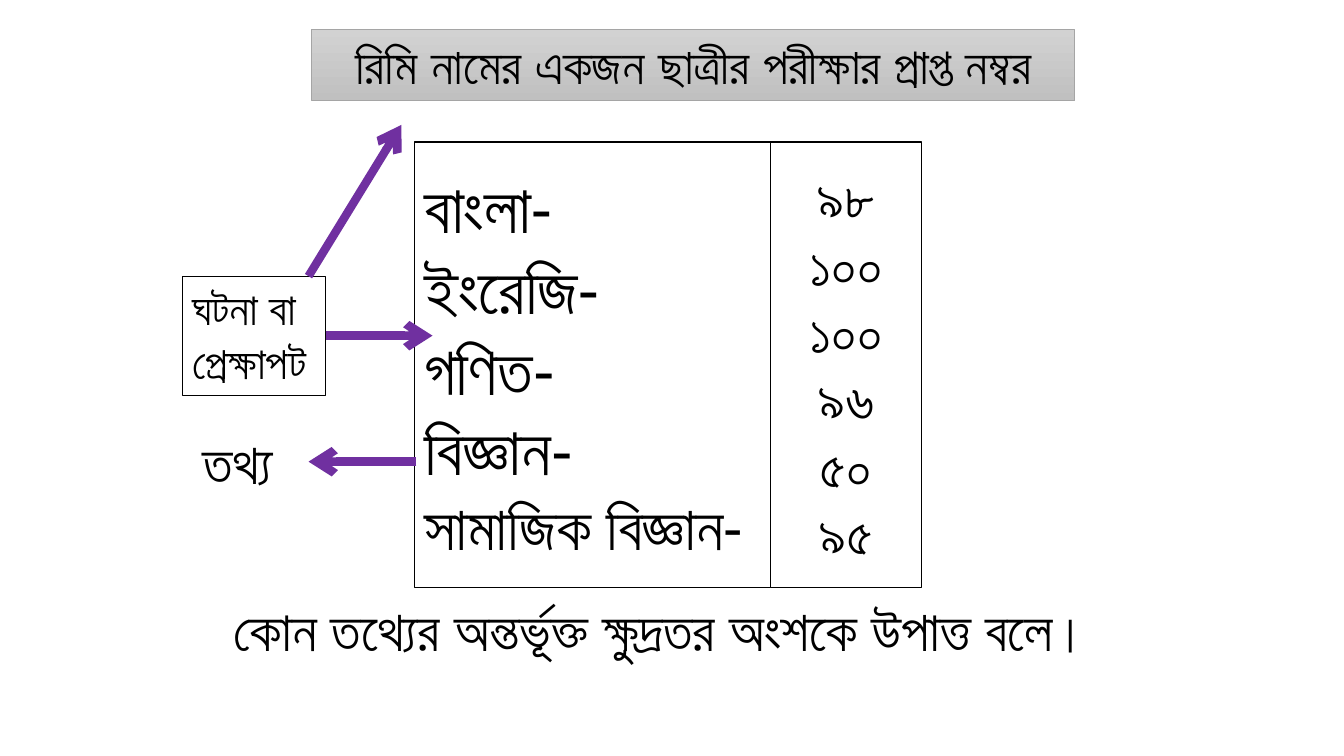
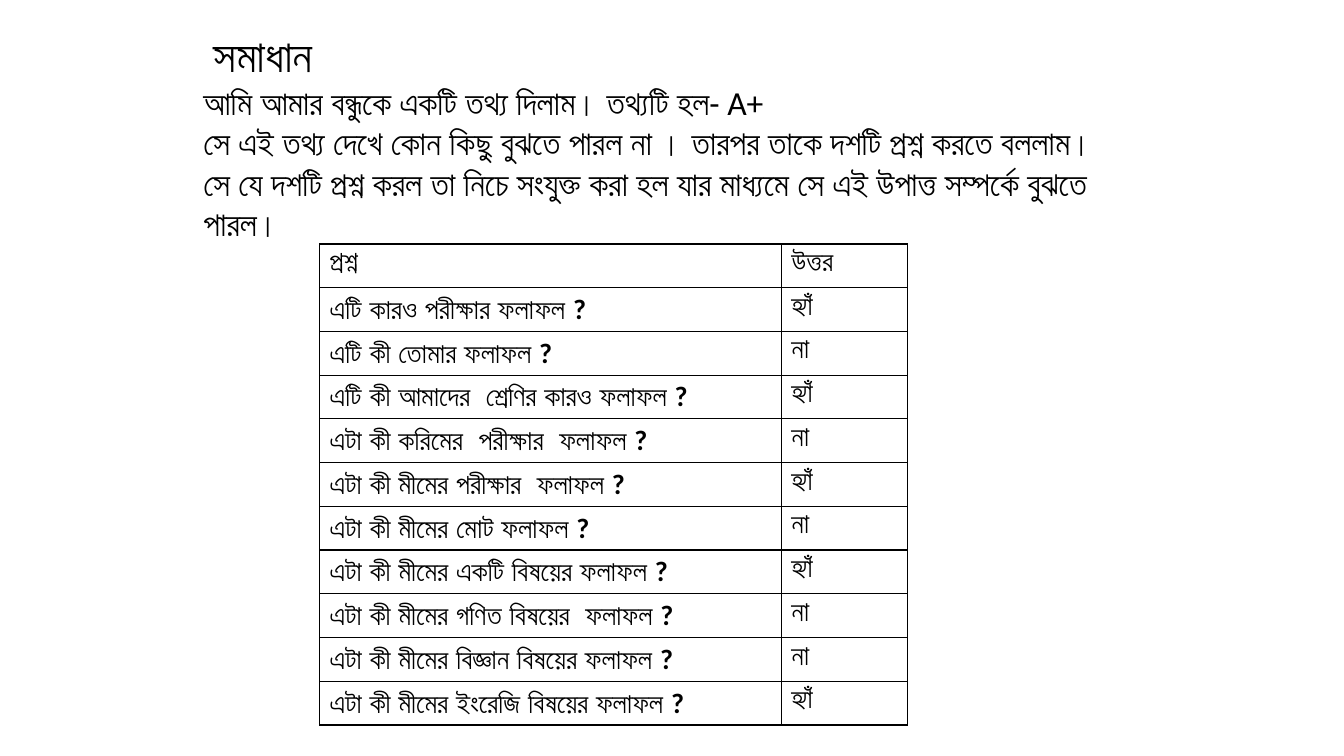
from lxml.etree import SubElement
from pptx import Presentation
from pptx.dml.color import RGBColor
from pptx.enum.shapes import MSO_CONNECTOR, MSO_SHAPE
from pptx.enum.text import MSO_ANCHOR, PP_ALIGN
from pptx.oxml.ns import qn
from pptx.util import Inches, Pt

FONT = "Calibri"
BLACK, WHITE, PURPLE = "000000", "FFFFFF", "7030A0"
GREY = ("D2D2D2", "C0C0C0")
EDGE = "A5A5A5"
LEFT, MID = PP_ALIGN.LEFT, PP_ALIGN.CENTER

# Slide 1 content
TITLE = "রিমি নামের একজন ছাত্রীর পরীক্ষার প্রাপ্ত নম্বর"
MARKS = [
    ("বাংলা-", 48),
    ("ইংরেজি-", 48),
    ("গণিত-", 48),
    ("বিজ্ঞান-", 48),
    ("সামাজিক বিজ্ঞান-", 44),
]
SCORES = ["৯৮", "১০০", "১০০", "৯৬", "৫০", "৯৫"]
CLOSING = "কোন তথ্যের অন্তর্ভূক্ত ক্ষুদ্রতর অংশকে উপাত্ত বলে।"
EVENT = "ঘটনা বা প্রেক্ষাপট"
FACT = "তথ্য"
ARROWS = [  # from x, y, to x, y
    (3.06, 2.74, 3.98, 1.24),
    (3.23, 3.33, 4.29, 3.33),
    (4.13, 4.58, 3.06, 4.58),
]

# Slide 2 content
INTRO = [
    ("সমাধান", 32),
    ("আমি আমার বন্ধুকে একটি তথ্য দিলাম। তথ্যটি হল- A+", 24),
    ("সে এই তথ্য দেখে কোন কিছু বুঝতে পারল না । তারপর তাকে দশটি প্রশ্ন করতে বললাম।", 24),
    ("সে যে দশটি প্রশ্ন করল তা নিচে সংযুক্ত করা হল যার মাধ্যমে সে এই উপাত্ত সম্পর্কে বুঝতে পারল।", 24),
]
YES, NO = "হ্যাঁ", "না"
ROWS = [
    ("প্রশ্ন", "উত্তর"),
    ("এটি কারও পরীক্ষার ফলাফল ?", YES),
    ("এটি কী তোমার ফলাফল ?", NO),
    ("এটি কী আমাদের  শ্রেণির কারও ফলাফল ?", YES),
    ("এটা কী করিমের  পরীক্ষার  ফলাফল ?", NO),
    ("এটা কী মীমের পরীক্ষার  ফলাফল ?", YES),
    ("এটা কী মীমের মোট ফলাফল ?", NO),
    ("এটা কী মীমের একটি বিষয়ের ফলাফল ?", YES),
    ("এটা কী মীমের গণিত বিষয়ের  ফলাফল ?", NO),
    ("এটা কী মীমের বিজ্ঞান বিষয়ের ফলাফল ?", NO),
    ("এটা কী মীমের ইংরেজি বিষয়ের ফলাফল ?", YES),
]
COLS = (4.58, 1.25)
ROW_H = 0.43


def color(text):
    return RGBColor.from_string(text)


def write(frame, lines, align=LEFT, bold=False):
    """Fill a text frame with (text, size) lines."""
    frame.word_wrap = True
    for i, (text, size) in enumerate(lines):
        para = frame.add_paragraph() if i else frame.paragraphs[0]
        para.text, para.alignment = text, align
        font = para.font
        font.name, font.size, font.bold = FONT, Pt(size), bold
        font.color.rgb = color(BLACK)


def label(slide, spot, lines, align=LEFT, bold=False):
    box = slide.shapes.add_textbox(*map(Inches, spot))
    write(box.text_frame, lines, align, bold)
    return box


def panel(slide, spot, lines, align=LEFT, bold=False, fill=None,
          edge=BLACK, width=1, anchor=MSO_ANCHOR.MIDDLE):
    box = slide.shapes.add_shape(MSO_SHAPE.RECTANGLE, *map(Inches, spot))
    box.shadow.inherit = False
    if isinstance(fill, tuple):
        box.fill.gradient()
        box.fill.gradient_angle = 270
        for stop, shade in zip(box.fill.gradient_stops, fill):
            stop.color.rgb = color(shade)
    elif fill:
        box.fill.solid()
        box.fill.fore_color.rgb = color(fill)
    else:
        box.fill.background()
    box.line.color.rgb = color(edge)
    box.line.width = Pt(width)
    box.text_frame.vertical_anchor = anchor
    write(box.text_frame, lines, align, bold)
    return box


def arrow(slide, ends):
    link = slide.shapes.add_connector(MSO_CONNECTOR.STRAIGHT, *map(Inches, ends))
    link.line.color.rgb = color(PURPLE)
    link.line.width = Pt(6)
    SubElement(link.line._get_or_add_ln(), qn("a:tailEnd"), type="arrow")
    SubElement(link._element.spPr, qn("a:effectLst"))
    return link


def border(cell):
    """Draw thin black lines on all four sides of a cell."""
    props = cell._tc.get_or_add_tcPr()
    for i, side in enumerate(("lnL", "lnR", "lnT", "lnB")):
        line = props.makeelement(qn("a:" + side), {"w": str(Pt(1))})
        fill = SubElement(line, qn("a:solidFill"))
        SubElement(fill, qn("a:srgbClr"), val=BLACK)
        props.insert(i, line)


def marks(slide):
    top = MSO_ANCHOR.TOP
    panel(slide, (3.09, 0.29, 7.57, 0.71), [(TITLE, 36)], MID, True,
          GREY, EDGE, 0.5, top)
    # Subjects and scores
    panel(slide, (4.11, 1.41, 3.54, 4.42), MARKS, fill=WHITE)
    panel(slide, (7.64, 1.41, 1.5, 4.42), [(s, 40) for s in SCORES], MID, fill=WHITE)
    label(slide, (1.65, 5.86, 9.83, 0.77), [(CLOSING, 40)], MID)
    # Side labels and arrows
    event = panel(slide, (1.81, 2.74, 1.42, 1.18), [(EVENT, 32)],
                  width=0.75, anchor=top)
    links = [arrow(slide, ends) for ends in ARROWS]
    links[1].begin_connect(event, 3)
    label(slide, (1.91, 4.2, 1.06, 0.77), [(FACT, 40)], bold=True)


def answers(slide):
    intro = label(slide, (1.92, 0.23, 9.33, 2.26), INTRO)
    first = intro.text_frame.paragraphs[0]
    first._p.get_or_add_pPr().set("indent", str(Inches(0.1)))
    # Questions and answers
    size = (sum(COLS), ROW_H * len(ROWS))
    frame = slide.shapes.add_table(len(ROWS), len(COLS),
                                   *map(Inches, (3.17, 2.42) + size))
    table = frame.table
    table.first_row = table.horz_banding = False
    for col, width in zip(table.columns, COLS):
        col.width = Inches(width)
    for r, row in enumerate(ROWS):
        table.rows[r].height = Inches(ROW_H)
        for c, text in enumerate(row):
            cell = table.cell(r, c)
            cell.fill.solid()
            cell.fill.fore_color.rgb = color(WHITE)
            border(cell)
            write(cell.text_frame, [(text, 20)], bold=True)


def main():
    deck = Presentation()
    deck.slide_width, deck.slide_height = Inches(13.33), Inches(7.5)
    for build in (marks, answers):
        build(deck.slides.add_slide(deck.slide_layouts[6]))
    deck.save("out.pptx")


if __name__ == "__main__":
    main()
